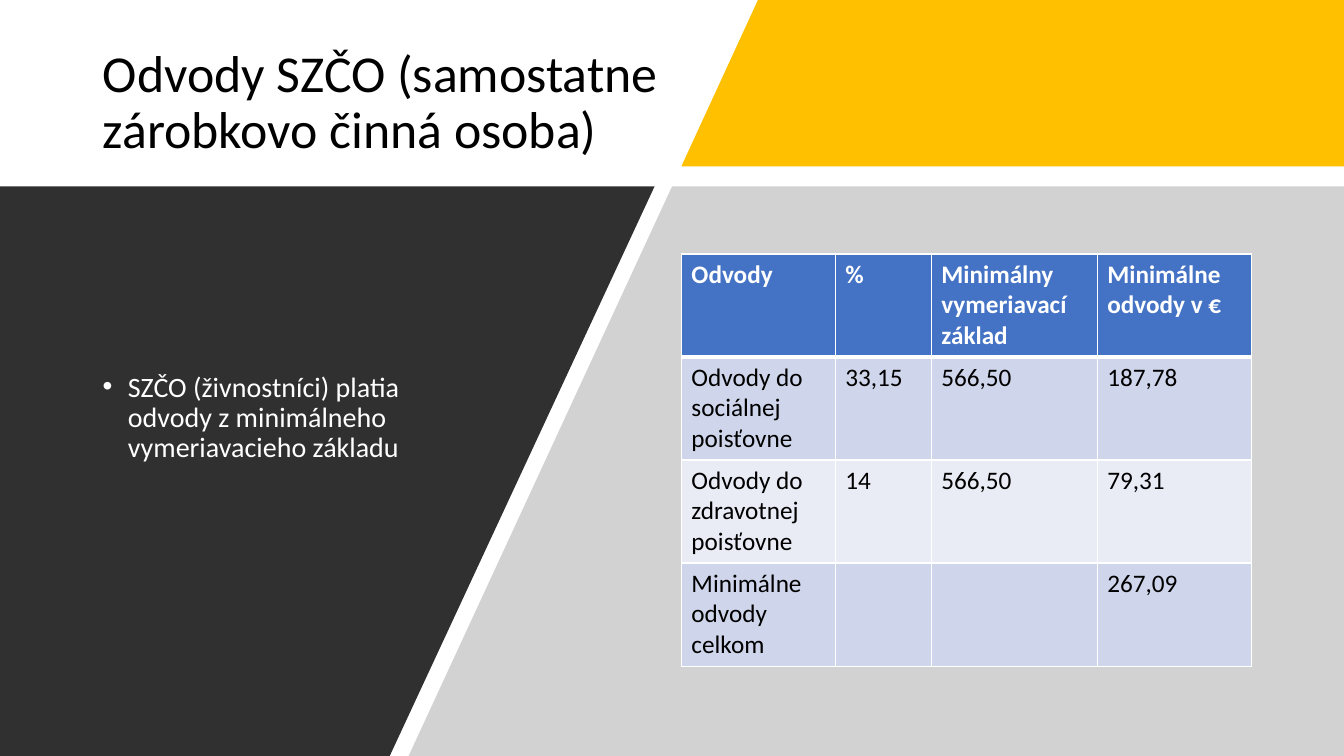
from lxml import etree
from pptx import Presentation
from pptx import util as u
from pptx.dml.color import RGBColor
from pptx.enum import text
from pptx.oxml import ns

WHITE = RGBColor(0xFF, 0xFF, 0xFF)
BLACK = RGBColor(0x00, 0x00, 0x00)
YELLOW = RGBColor(0xFF, 0xC0, 0x00)
GREY = RGBColor(0xA6, 0xA6, 0xA6)
CHARCOAL = RGBColor(0x30, 0x30, 0x30)
BLUE = RGBColor(0x44, 0x72, 0xC4)
BANDS = [RGBColor(0xCF, 0xD5, 0xEA), RGBColor(0xE9, 0xEB, 0xF5)]


def write(frame, content, size=18, color=BLACK, bold=False, line_spacing=None, space_before=0):
    """Put one formatted paragraph into a text frame."""
    paragraph = frame.paragraphs[0]
    paragraph.alignment = text.PP_ALIGN.LEFT
    paragraph.space_before = u.Pt(space_before)
    paragraph.line_spacing = line_spacing
    run = paragraph.add_run()
    run.text = content
    run.font.name = "Calibri"
    run.font.size = u.Pt(size)
    run.font.bold = bold
    run.font.color.rgb = color
    return paragraph


def add_xml(parent, tag, **attributes):
    return etree.SubElement(parent, ns.qn(tag), attributes)


class SlideBuilder:
    """Places elements in percent of the slide's width and height."""

    def __init__(self, presentation):
        self.width = presentation.slide_width
        self.height = presentation.slide_height
        self.slide = presentation.slides.add_slide(presentation.slide_layouts[5])

    def x(self, share):
        return u.Emu(round(self.width * share / 100))

    def y(self, share):
        return u.Emu(round(self.height * share / 100))

    def box(self, left, top, width, height):
        return self.x(left), self.y(top), self.x(width), self.y(height)

    def title(self, content, *box):
        shape = self.slide.shapes.title
        shape.left, shape.top, shape.width, shape.height = self.box(*box)
        frame = shape.text_frame
        frame.word_wrap = True
        frame.auto_size = text.MSO_AUTO_SIZE.NONE
        frame.vertical_anchor = text.MSO_ANCHOR.MIDDLE
        write(frame, content, size=37, line_spacing=0.9)

    def panel(self, color, corners, opacity=100):
        points = [(self.x(across), self.y(down)) for across, down in corners]
        builder = self.slide.shapes.build_freeform(*points[0])
        builder.add_line_segments(points[1:], close=True)
        shape = builder.convert_to_shape()
        shape.shadow.inherit = False
        shape.line.fill.background()
        shape.fill.solid()
        shape.fill.fore_color.rgb = color
        if opacity < 100:
            fill_color = shape.fill._xPr.find(".//" + ns.qn("a:srgbClr"))
            add_xml(fill_color, "a:alpha", val=str(opacity * 1000))

    def bullet(self, content, *box):
        frame = self.slide.shapes.add_textbox(*self.box(*box)).text_frame
        frame.word_wrap = True
        frame.vertical_anchor = text.MSO_ANCHOR.MIDDLE
        paragraph = write(frame, content, size=20, color=WHITE, line_spacing=0.9, space_before=10)
        properties = paragraph._p.get_or_add_pPr()
        indent = u.Inches(0.25)
        properties.set("marL", str(indent))
        properties.set("indent", str(-indent))
        add_xml(properties, "a:buFont", typeface="Arial")
        add_xml(properties, "a:buChar", char="•")

    def borders(self, cell, **widths):
        properties = cell._tc.get_or_add_tcPr()
        for index, side in enumerate("LRTB"):
            line = etree.Element(ns.qn("a:ln" + side), w=str(u.Pt(widths.get(side, 1))))
            add_xml(add_xml(line, "a:solidFill"), "a:srgbClr", val=str(WHITE))
            properties.insert(index, line)

    def table(self, rows, left, top, widths, row_height):
        box = self.box(left, top, sum(widths), row_height * len(rows))
        table = self.slide.shapes.add_table(len(rows), len(widths), *box).table
        table.first_row = table.horz_banding = False
        for column, width in zip(table.columns, widths):
            column.width = self.x(width)
        for r, row in enumerate(rows):
            header = r == 0
            for c, content in enumerate(row):
                cell = table.cell(r, c)
                cell.fill.solid()
                cell.fill.fore_color.rgb = BLUE if header else BANDS[(r - 1) % 2]
                self.borders(cell, B=3 if header else 1, T=3 if r == 1 else 1)
                if content:
                    write(cell.text_frame, content, color=WHITE if header else BLACK, bold=header)


def main():
    presentation = Presentation()
    presentation.slide_width = u.Inches(13.33)
    presentation.slide_height = u.Inches(7.5)
    builder = SlideBuilder(presentation)
    margin, content_left, band_bottom, panel_top = 6.9, 50.7, 22, 24.67

    # Heading
    builder.title("Odvody SZČO (samostatne zárobkovo činná osoba)", margin, 5.33, 43.8, 16.67)

    # Slanted background panels
    builder.panel(YELLOW, [(56.4, 0), (100, 0), (100, band_bottom), (content_left, band_bottom)])
    builder.panel(GREY, [(50, panel_top), (100, panel_top), (100, 100), (30.4, 100)], opacity=50)
    builder.panel(CHARCOAL, [(0, panel_top), (48.7, panel_top), (29, 100), (0, 100)])

    # Explanation on the dark panel
    builder.bullet("SZČO (živnostníci) platia odvody z minimálneho vymeriavacieho základu",
                   margin, 31.73, 29.55, 47.2)

    # Contribution table
    builder.table([
        ["Odvody", "%", "Minimálny vymeriavací základ", "Minimálne odvody v €"],
        ["Odvody do sociálnej poisťovne", "33,15", "566,50", "187,78"],
        ["Odvody do zdravotnej poisťovne", "14", "566,50", "79,31"],
        ["Minimálne odvody celkom", "", "", "267,09"],
    ], content_left, 33.6, widths=[11.45, 7.15, 12.35, 11.45], row_height=13.63)

    presentation.save("out.pptx")


if __name__ == "__main__":
    main()
